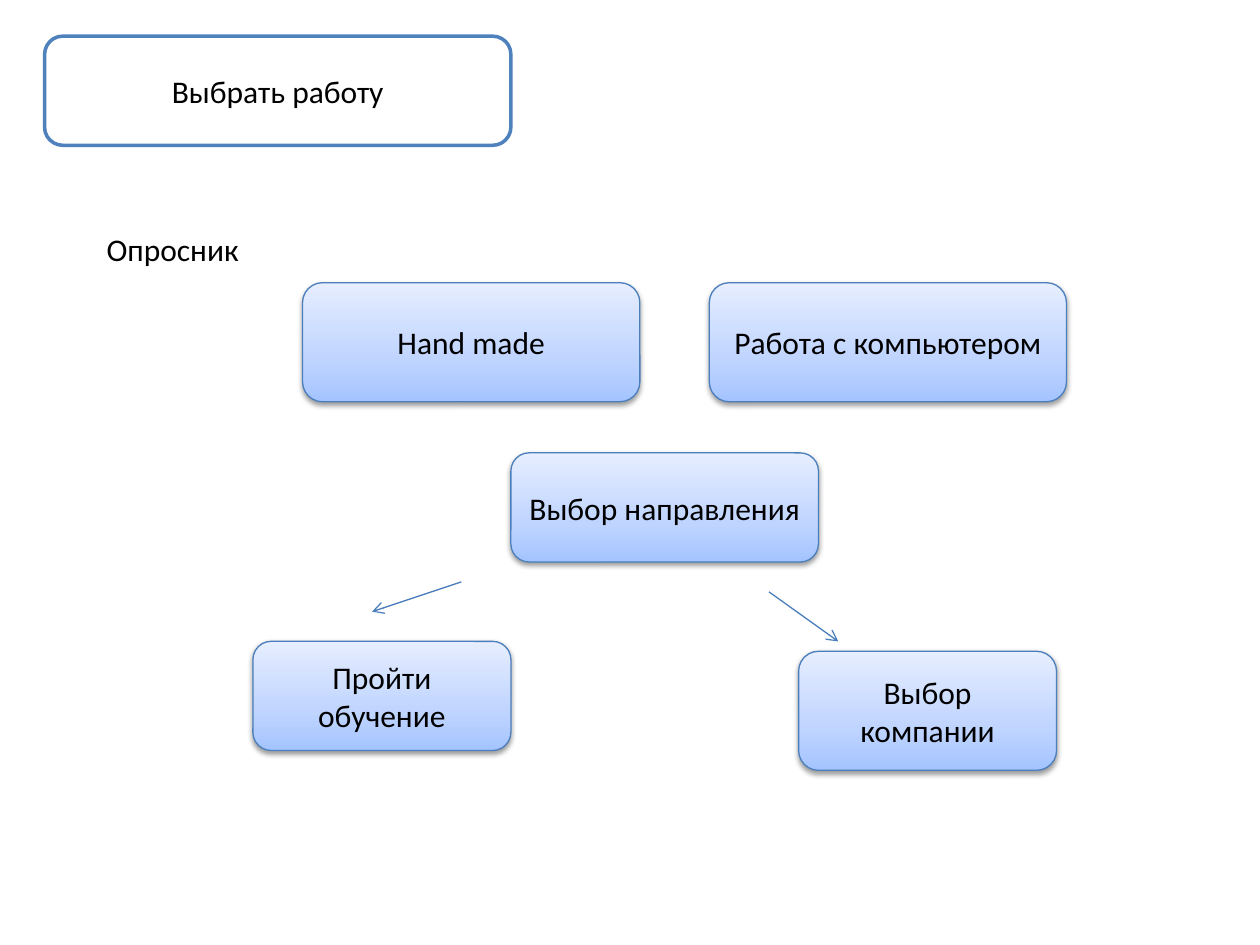
from copy import deepcopy

from lxml import etree
from pptx import Presentation
from pptx.dml.color import RGBColor
from pptx.enum.shapes import MSO_CONNECTOR, MSO_SHAPE
from pptx.enum.text import MSO_ANCHOR, MSO_AUTO_SIZE, PP_ALIGN
from pptx.oxml.ns import qn
from pptx.util import Cm, Pt

ROUNDED = MSO_SHAPE.ROUNDED_RECTANGLE
STRAIGHT = MSO_CONNECTOR.STRAIGHT
MIDDLE = MSO_ANCHOR.MIDDLE
FIT_TEXT = MSO_AUTO_SIZE.SHAPE_TO_FIT_TEXT
CENTER = PP_ALIGN.CENTER

BLACK = RGBColor(0x00, 0x00, 0x00)
WHITE = RGBColor(0xFF, 0xFF, 0xFF)
HEADING_BLUE = RGBColor(0x4F, 0x81, 0xBD)
STEP_BLUE = RGBColor(0x4B, 0x7E, 0xBC)
STEP_GRADIENT = [
    (0, RGBColor(0xA4, 0xC4, 0xFF)),
    (0.35, RGBColor(0xBF, 0xD4, 0xFF)),
    (1, RGBColor(0xE6, 0xEE, 0xFF)),
]

LOW, TALL = 2.2, 2.4
CHOICE_TOP = 5.7
OUTCOME_WIDTH = 5.2


class FlowSlide:
    """Draws the parts of a flow diagram on one slide in a shared style."""

    font = "Calibri"
    size = Pt(18)
    thin = Pt(0.75)

    def __init__(self, slide):
        self.slide = slide

    def set_text(self, frame, text):
        frame.text = text
        for run in frame.paragraphs[0].runs:
            run.font.name = self.font
            run.font.size = self.size
            run.font.color.rgb = BLACK

    def box(self, text, left, top, width, height, color, weight):
        box = self.slide.shapes.add_shape(
            ROUNDED, Cm(left), Cm(top), Cm(width), Cm(height))
        box.shadow.inherit = False
        box.line.color.rgb = color
        box.line.width = weight
        self.set_text(box.text_frame, text)
        box.text_frame.vertical_anchor = MIDDLE
        box.text_frame.paragraphs[0].alignment = CENTER
        return box

    def heading(self, text, left, top, width, height):
        heading = self.box(text, left, top, width, height, HEADING_BLUE, Pt(2))
        heading.fill.solid()
        heading.fill.fore_color.rgb = WHITE

    def step(self, text, left, top, width, height):
        step = self.box(text, left, top, width, height, STEP_BLUE, self.thin)
        step.fill.gradient()
        step.fill.gradient_angle = 90
        properties = step._element.spPr
        stops = properties.find(".//" + qn("a:gsLst"))
        stops.append(deepcopy(stops[0]))
        for stop, (position, color) in zip(step.fill.gradient_stops, STEP_GRADIENT):
            stop.position = position
            stop.color.rgb = color
        shadow = etree.SubElement(
            properties.find(qn("a:effectLst")), qn("a:outerShdw"),
            blurRad=str(Pt(3.1)), dist=str(Pt(1.6)), dir="5400000", rotWithShape="0")
        shade = etree.SubElement(shadow, qn("a:srgbClr"), val=str(BLACK))
        etree.SubElement(shade, qn("a:alpha"), val="38000")

    def label(self, text, left, top, width, height):
        label = self.slide.shapes.add_textbox(
            Cm(left), Cm(top), Cm(width), Cm(height))
        self.set_text(label.text_frame, text)
        label.text_frame.word_wrap = False
        label.text_frame.auto_size = FIT_TEXT

    def arrow(self, *ends):
        arrow = self.slide.shapes.add_connector(STRAIGHT, *map(Cm, ends))
        arrow.line.color.rgb = STEP_BLUE
        arrow.line.width = self.thin
        properties = arrow._element.spPr
        etree.SubElement(properties.find(qn("a:ln")), qn("a:tailEnd"), type="arrow")
        etree.SubElement(properties, qn("a:effectLst"))


def main():
    deck = Presentation()
    deck.slide_width, deck.slide_height = Cm(25.4), Cm(19.05)
    flow = FlowSlide(deck.slides.add_slide(deck.slide_layouts[6]))

    flow.heading("Выбрать работу", 0.9, 0.73, 9.4, LOW)
    flow.label("Опросник", 1.9, 4.52, 3.2, 1.02)
    flow.step("Hand made", 6.1, CHOICE_TOP, 6.8, TALL)
    flow.step("Работа с компьютером", 14.3, CHOICE_TOP, 7.2, TALL)
    flow.step("Пройти обучение", 5.1, 12.93, OUTCOME_WIDTH, LOW)
    flow.step("Выбор компании", 16.1, 13.13, OUTCOME_WIDTH, TALL)
    flow.arrow(9.3, 11.73, 7.5, 12.33)
    flow.arrow(15.5, 11.93, 16.9, 12.93)
    flow.step("Выбор направления", 10.3, 9.13, 6.2, LOW)

    deck.save("out.pptx")


if __name__ == "__main__":
    main()
